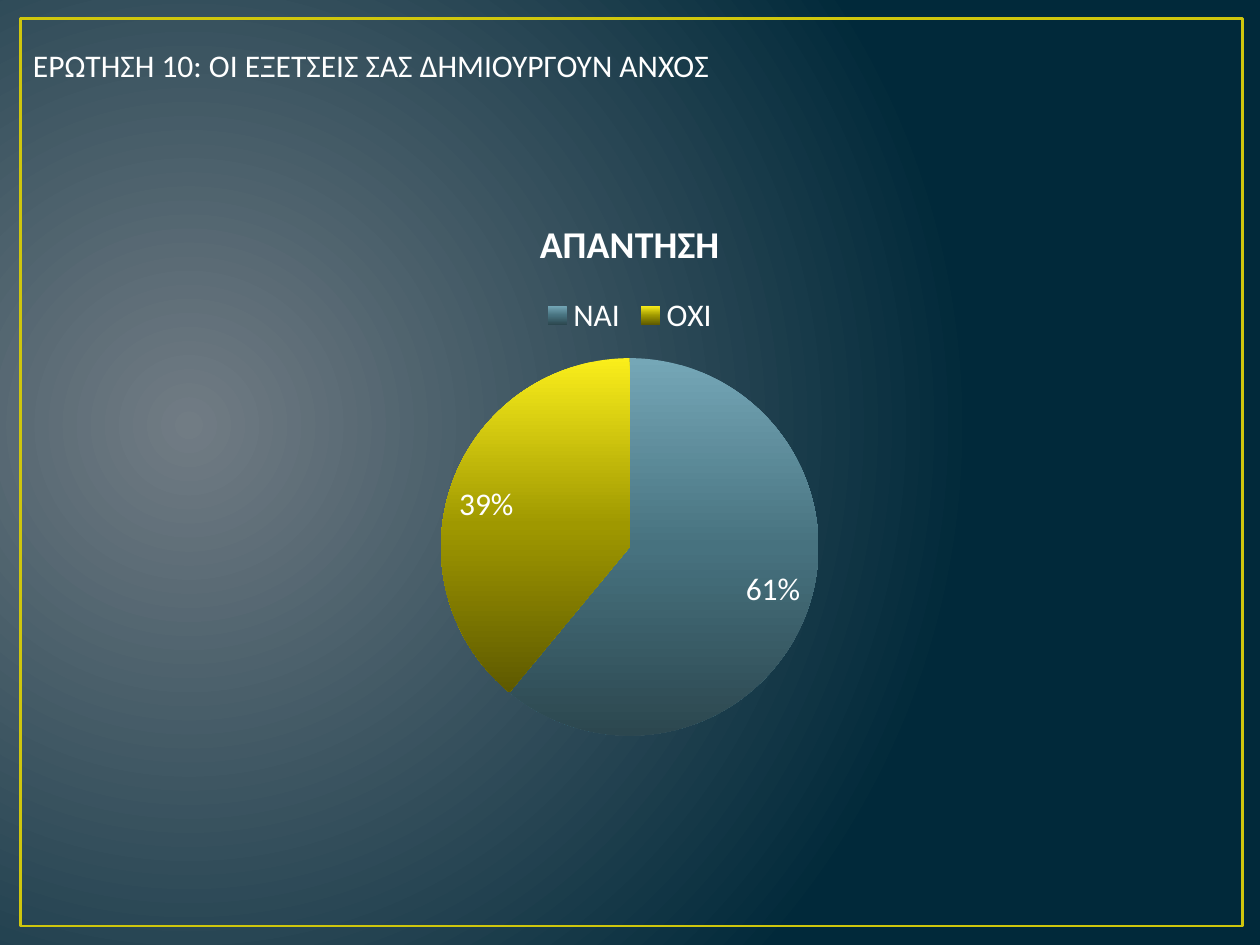
from dataclasses import dataclass

from lxml import etree
from pptx import Presentation
from pptx.chart.data import CategoryChartData
from pptx.dml.color import RGBColor
from pptx.enum.chart import XL_CHART_TYPE, XL_LABEL_POSITION, XL_LEGEND_POSITION
from pptx.enum.shapes import MSO_SHAPE
from pptx.enum.text import MSO_ANCHOR, PP_ALIGN
from pptx.oxml.ns import qn
from pptx.util import Cm, Pt

PIE = XL_CHART_TYPE.PIE
LABEL_INSIDE = XL_LABEL_POSITION.INSIDE_END
LEGEND_TOP = XL_LEGEND_POSITION.TOP
RECTANGLE = MSO_SHAPE.RECTANGLE
MIDDLE = MSO_ANCHOR.MIDDLE
LEFT = PP_ALIGN.LEFT
TITLE_ONLY = 5


@dataclass(frozen=True)
class Theme:
    font: str = "Calibri"
    text: RGBColor = RGBColor(0xFF, 0xFF, 0xFF)
    frame: RGBColor = RGBColor(0xCF, 0xC6, 0x0D)
    background: tuple = ("717C84", "01293A")
    slices: tuple = (
        ("75A7B7", "47727F", "2C474F"),
        ("FAEE1B", "9F9800", "5E5900"),
    )
    text_size: Pt = Pt(18)
    chart_title_size: Pt = Pt(21.6)


THEME = Theme()


def style_font(font, size=THEME.text_size, bold=False):
    font.name = THEME.font
    font.size = size
    font.bold = bold
    font.color.rgb = THEME.text


def apply_gradient(solid_fill, colors):
    """Replace a solid fill with evenly spaced stops; return the new fill."""
    gradient = etree.Element(qn("a:gradFill"), rotWithShape="1")
    stops = etree.SubElement(gradient, qn("a:gsLst"))
    for index, color in enumerate(colors):
        position = 100000 * index // (len(colors) - 1)
        stop = etree.SubElement(stops, qn("a:gs"), pos=str(position))
        etree.SubElement(stop, qn("a:srgbClr"), val=color)
    solid_fill.getparent().replace(solid_fill, gradient)
    return gradient


def set_background(slide):
    slide.background.fill.solid()
    solid_fill = next(slide.element.iter(qn("a:solidFill")))
    gradient = apply_gradient(solid_fill, THEME.background)
    circle = etree.SubElement(gradient, qn("a:path"), {"path": "circle"})
    etree.SubElement(circle, qn("a:fillToRect"),
                     l="15000", t="50000", r="85000", b="60000")


def add_frame(slide, left, top, width, height):
    frame = slide.shapes.add_shape(RECTANGLE, left, top, width, height)
    frame.shadow.inherit = False
    frame.fill.background()
    frame.line.color.rgb = THEME.frame
    frame.line.width = Pt(1.5)


def set_title(slide, text, left, top, width, height):
    title = slide.shapes.title
    title.left, title.top, title.width, title.height = left, top, width, height
    title.text_frame.text = text
    title.text_frame.word_wrap = True
    title.text_frame.vertical_anchor = MIDDLE
    paragraph = title.text_frame.paragraphs[0]
    paragraph.alignment = LEFT
    style_font(paragraph.font)


def add_pie(slide, name, answers, left, top, width, height):
    data = CategoryChartData()
    data.categories = list(answers)
    data.add_series(name, list(answers.values()))
    chart = slide.shapes.add_chart(PIE, left, top, width, height, data).chart
    style_font(chart.font)

    # Title and legend
    chart.has_title = True
    chart.chart_title.include_in_layout = False
    chart.chart_title.text_frame.text = name
    style_font(chart.chart_title.text_frame.paragraphs[0].font,
               THEME.chart_title_size, bold=True)
    chart.has_legend = True
    chart.legend.position = LEGEND_TOP
    chart.legend.include_in_layout = False
    style_font(chart.legend.font)

    # Percentage labels
    plot = chart.plots[0]
    plot.vary_by_categories = True
    plot.has_data_labels = True
    labels = plot.data_labels
    labels.show_percentage = True
    labels.show_value = False
    labels.number_format = "0%"
    labels.number_format_is_linked = False
    labels.position = LABEL_INSIDE
    style_font(labels.font)

    # Slices shaded from top to bottom
    for index in range(len(answers)):
        plot.series[0].points[index].format.fill.solid()
    for point, colors in zip(chart.element.iter(qn("c:dPt")), THEME.slices):
        solid_fill = next(point.iter(qn("a:solidFill")))
        gradient = apply_gradient(solid_fill, colors)
        etree.SubElement(gradient, qn("a:lin"), ang="5400000", scaled="0")


def main():
    presentation = Presentation()
    presentation.slide_width = Cm(25.4)
    presentation.slide_height = Cm(19.05)
    slide = presentation.slides.add_slide(presentation.slide_layouts[TITLE_ONLY])

    set_background(slide)
    add_frame(slide, Cm(0.41), Cm(0.38), Cm(24.64), Cm(18.29))
    set_title(slide, "ΕΡΩΤΗΣΗ 10: ΟΙ ΕΞΕΤΣΕΙΣ ΣΑΣ ΔΗΜΙΟΥΡΓΟΥΝ ΑΝΧΟΣ",
              Cm(0.41), Cm(0.79), Cm(24.2), Cm(1.03))
    add_pie(slide, "ΑΠΑΝΤΗΣΗ", {"ΝΑΙ": 61, "ΌΧΙ": 39},
            Cm(4.23), Cm(3.89), Cm(16.93), Cm(11.29))

    presentation.save("out.pptx")


if __name__ == "__main__":
    main()
